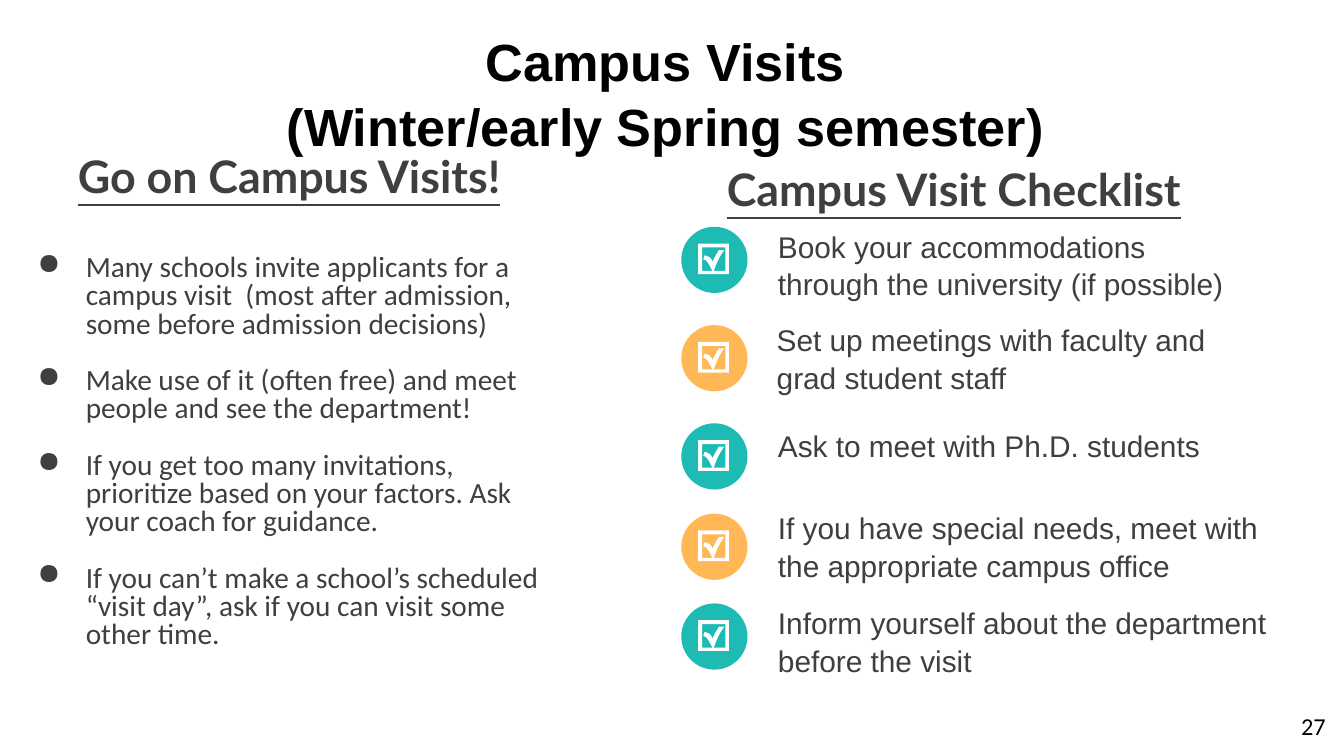
from lxml import etree
from pptx import Presentation
from pptx import util as u
from pptx.dml.color import RGBColor
from pptx.enum import shapes, text
from pptx.oxml.ns import qn

Pt = u.Pt
BLACK, GRAY, WHITE = "000000", "3F3F3F", "FFFFFF"
TEAL, ORANGE = "1DBBB4", "FFB855"
CIRCLE_LEFT, CIRCLE_SIZE, BOX_INSET = 365, 35.5, 9

VISIT_TIPS = [
    "Many schools invite applicants for a campus visit  (most after admission, "
    "some before admission decisions)",
    "Make use of it (often free) and meet people and see the department!",
    "If you get too many invitations, prioritize based on your factors. "
    "Ask your coach for guidance.",
    "If you can’t make a school’s scheduled “visit day”, ask if you can visit "
    "some other time.",
]

# circle top, then text left, top, width, height
CHECKLIST = [
    (121.5, (409.7, 118, 258.5, 41),
     "Book your accommodations through the university (if possible)"),
    (174.2, (409, 167.8, 258.5, 58.3),
     "Set up meetings with faculty and grad student staff"),
    (226.8, (409.7, 224.6, 258.5, 41), "Ask to meet with Ph.D. students"),
    (275.2, (409.7, 268.6, 286.6, 41),
     "If you have special needs, meet with the appropriate campus office"),
    (323.3, (409.7, 319.7, 286.6, 63.4),
     "Inform yourself about the department before the visit"),
]


def color(hex_value):
    return RGBColor.from_string(hex_value)


def add_text(slide, box, paragraphs, *, size, font, fill=GRAY, bold=False,
             underline=False, align=text.PP_ALIGN.LEFT, anchor=text.MSO_ANCHOR.TOP,
             spacing=1.0, gap=0, margin=0, indent=0, bullet=None,
             inset_top=3.6, inset_bottom=3.6):
    shape = slide.shapes.add_textbox(*map(Pt, box))
    frame = shape.text_frame
    frame.word_wrap = True
    frame.vertical_anchor = anchor
    frame.margin_left = frame.margin_right = Pt(7.2)
    frame.margin_top, frame.margin_bottom = Pt(inset_top), Pt(inset_bottom)
    for index, line in enumerate(paragraphs):
        paragraph = frame.add_paragraph() if index else frame.paragraphs[0]
        paragraph.text = line
        paragraph.alignment = align
        paragraph.line_spacing = spacing
        if index:
            paragraph.space_before = Pt(gap)
        set_indent(paragraph, margin, indent, bullet)
        paragraph.font.size = Pt(size)
        paragraph.font.name = font
        paragraph.font.bold = bold
        paragraph.font.underline = underline
        paragraph.font.color.rgb = color(fill)


def set_indent(paragraph, margin, indent, bullet):
    properties = paragraph._p.get_or_add_pPr()
    properties.set("marL", str(Pt(margin)))
    properties.set("indent", str(Pt(indent)))
    if bullet:
        etree.SubElement(properties, qn("a:buChar")).set("char", bullet)


def paint(shape, fill):
    shape.shadow.inherit = False
    shape.fill.solid()
    shape.fill.fore_color.rgb = color(fill)
    shape.line.fill.background()


def curve(start, control_1, control_2, end, steps=6):
    """Points along a cubic Bezier curve, without its start."""
    points = []
    for step in range(1, steps + 1):
        t = step / steps
        weights = ((1 - t) ** 3, 3 * t * (1 - t) ** 2, 3 * t * t * (1 - t), t ** 3)
        corners = (start, control_1, control_2, end)
        points.append(tuple(sum(w * corner[axis] for w, corner in zip(weights, corners))
                            for axis in (0, 1)))
    return points


def add_check_icon(slide, top, fill):
    """A circle holding a ticked box; the tick is left out of the box's hole."""
    group = slide.shapes.add_group_shape()
    circle = group.shapes.add_shape(shapes.MSO_SHAPE.OVAL, Pt(CIRCLE_LEFT), Pt(top),
                                    Pt(CIRCLE_SIZE), Pt(CIRCLE_SIZE))
    paint(circle, fill)

    hole = [(30, 210), (110, 210),
            *curve((110, 210), (90, 180), (80, 130), (40, 120)),
            (50, 90),
            *curve((50, 90), (90, 100), (100, 110), (110, 140)),
            *curve((110, 140), (130, 100), (140, 80), (160, 50)),
            (200, 50),
            *curve((200, 50), (170, 90), (140, 150), (120, 210)),
            (210, 210), (210, 30)]
    builder = group.shapes.build_freeform(0, 0, scale=Pt(0.07))
    builder.add_line_segments([(235, 0), (235, 235), (0, 235)])
    builder.move_to(30, 30)
    builder.add_line_segments(hole)
    check = builder.convert_to_shape(Pt(CIRCLE_LEFT + BOX_INSET), Pt(top + BOX_INSET))
    paint(check, WHITE)


def add_heading(slide, box, heading, **options):
    add_text(slide, box, [heading], size=24, font="Lato", bold=True, underline=True,
             anchor=text.MSO_ANCHOR.BOTTOM, margin=36, indent=-18, **options)


def main():
    presentation = Presentation()
    presentation.slide_width, presentation.slide_height = Pt(720), Pt(405)
    slide = presentation.slides.add_slide(presentation.slide_layouts[6])

    add_text(slide, (46, 26, 620.6, 78.5),
             ["Campus Visits\v(Winter/early Spring semester)"],
             size=28, font="Arial", fill=BLACK, bold=True, spacing=1.05,
             align=text.PP_ALIGN.CENTER, anchor=text.MSO_ANCHOR.MIDDLE,
             inset_bottom=36)
    add_heading(slide, (16.6, 80, 304.6, 58.3), "Go on Campus Visits!",
                spacing=0.9, inset_bottom=29.5)
    add_text(slide, (2.9, 133.2, 304.6, 262), VISIT_TIPS, size=15.7, font="Calibri",
             spacing=0.8, gap=15.2, margin=36, indent=-26, bullet="●")
    add_heading(slide, (364.3, 69.8, 306, 49), "Campus Visit Checklist", spacing=0.8)

    for index, (top, box, task) in enumerate(CHECKLIST):
        add_check_icon(slide, top, ORANGE if index % 2 else TEAL)
        add_text(slide, box, [task], size=16, font="Arial", spacing=1.05)

    add_text(slide, (674, 373.7, 43.2, 31), ["27"], size=13, font="Calibri", fill=BLACK,
             align=text.PP_ALIGN.RIGHT, inset_top=7.2, inset_bottom=7.2)
    presentation.save("out.pptx")


if __name__ == "__main__":
    main()
